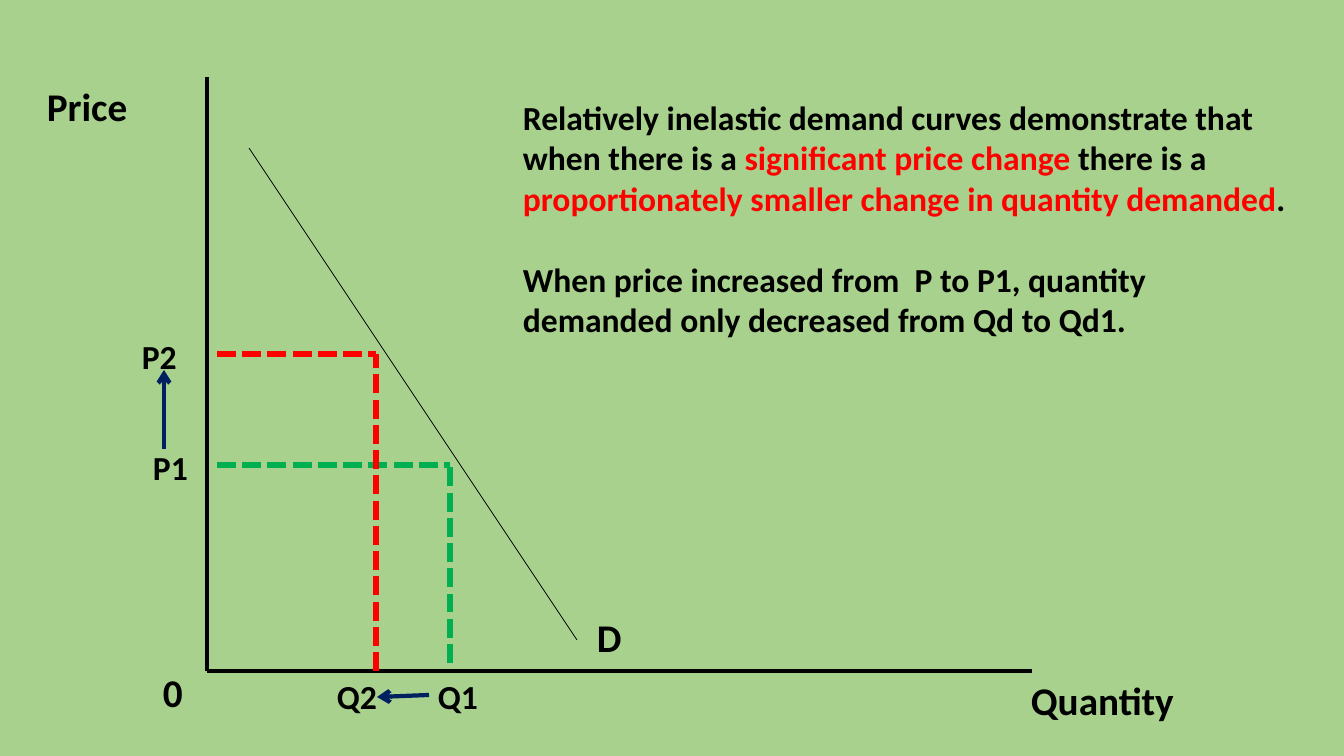
from pptx import Presentation
from pptx.dml.color import RGBColor as RGB
from pptx.enum.dml import MSO_LINE_DASH_STYLE as Dash
from pptx.enum.shapes import MSO_CONNECTOR as Connector
from pptx.enum.text import MSO_AUTO_SIZE as AutoSize
from pptx.util import Pt
from lxml import etree

PX = 914400 / 100.8
A = "{http://schemas.openxmlformats.org/drawingml/2006/main}"
COLOURS = {
    "background": "A9D18E",
    "black": "000000",
    "red": "FF0000",
    "green": "00B050",
    "navy": "002060",
}

deck = Presentation()
deck.slide_width, deck.slide_height = round(1344 * PX), round(756 * PX)
slide = deck.slides.add_slide(deck.slide_layouts[6])
slide.background.fill.solid()
slide.background.fill.fore_color.rgb = RGB.from_string(COLOURS["background"])


def add_line(start, end, colour, width, dashed=False, arrow=False):
    ends = [round(v * PX) for v in (*start, *end)]
    line = slide.shapes.add_connector(Connector.STRAIGHT, *ends)
    line.line.color.rgb = RGB.from_string(COLOURS[colour])
    line.line.width = Pt(width)
    if dashed:
        line.line.dash_style = Dash.SQUARE_DOT
        line.line._ln.find(A + "prstDash").set("val", "sysDash")
    if arrow:
        etree.SubElement(line.line._ln, A + "tailEnd", type="arrow")
    etree.SubElement(line._element.spPr, A + "effectLst")


def add_text(box, size, paragraphs, gap=0):
    shape = slide.shapes.add_textbox(*[round(v * PX) for v in box])
    frame = shape.text_frame
    frame.word_wrap = True
    frame.auto_size = AutoSize.SHAPE_TO_FIT_TEXT
    for i, runs in enumerate(paragraphs):
        paragraph = frame.add_paragraph() if i else frame.paragraphs[0]
        if i:
            paragraph.space_before = Pt(gap)
        for words, colour in runs:
            run = paragraph.add_run()
            run.text = words
            run.font.name = "Calibri"
            run.font.size = Pt(size)
            run.font.bold = True
            run.font.color.rgb = RGB.from_string(COLOURS[colour])


# Axes and demand curve
origin = (207, 671)
add_line((207, 77), origin, "black", 2.5)
add_line((1032, 671), origin, "black", 2.5)
add_line((249, 148), (577, 640), "black", 0.5)

# Price and quantity guides: quantity x, price y, foot y
for quantity, price, foot, colour in [
    (450, 465, 663, "green"),
    (376, 354, 671, "red"),
]:
    add_line((217, price), (quantity, price), colour, 4.5, dashed=True)
    add_line((quantity, foot), (quantity, price), colour, 4.5, dashed=True)

# Labels
for label, size, box in [
    ("Price", 28, (37, 77, 158, 57)),
    ("Quantity", 28, (1021, 671, 296, 57)),
    ("0", 28, (153, 663, 42, 57)),
    ("D", 28, (587, 608, 52, 57)),
    ("P2", 24, (132, 331, 85, 50)),
    ("P1", 24, (143, 442, 64, 50)),
    ("Q1", 24, (428, 671, 85, 50)),
    ("Q2", 24, (327, 671, 106, 50)),
]:
    add_text(box, size, [[(label, "black")]])

# Explanation
add_text((513, 92, 793, 254), 24, [
    [
        ("Relatively inelastic demand curves demonstrate that when there is a ", "black"),
        ("significant price change ", "red"),
        ("there is a ", "black"),
        ("proportionately smaller change in quantity demanded", "red"),
        (".", "black"),
    ],
    [("When price increased from  P to P1, quantity demanded only decreased from Qd to Qd1.", "black")],
], gap=29)

# Direction of change
add_line((164, 449), (164, 370), "navy", 3, arrow=True)
add_line((429, 695), (377, 697), "navy", 3, arrow=True)

deck.save("out.pptx")
